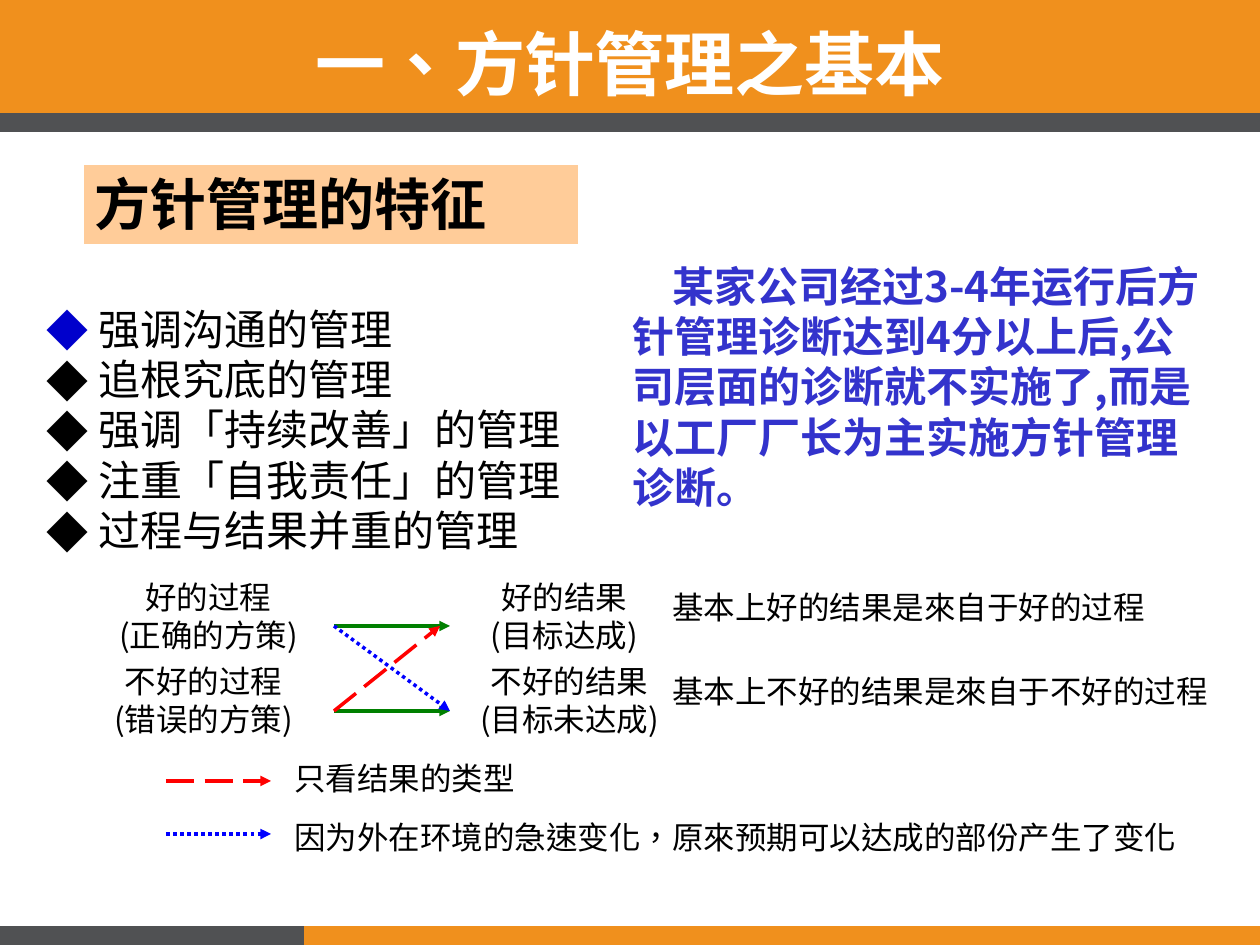
from lxml import etree
from pptx import Presentation
from pptx.dml.color import RGBColor
from pptx.enum.dml import MSO_LINE
from pptx.enum.lang import MSO_LANGUAGE_ID as LANG
from pptx.enum.shapes import MSO_CONNECTOR, MSO_SHAPE
from pptx.enum.text import MSO_ANCHOR, PP_ALIGN
from pptx.oxml.ns import qn
from pptx.util import Pt

PX = 914400 / 126
FONT = "Noto Sans CJK SC"


def rgb(color):
    return RGBColor.from_string(color)


def write(tf, lines, size=18, color="000000", bold=False, align=PP_ALIGN.LEFT,
          lang=LANG.SIMPLIFIED_CHINESE):
    """Fill a text frame, one paragraph a line."""
    for name, value in dict(word_wrap=True, vertical_anchor=MSO_ANCHOR.TOP).items():
        setattr(tf, name, value)
    for i, line in enumerate(lines):
        p = tf.paragraphs[0] if i == 0 else tf.add_paragraph()
        p.alignment = align
        r = p.add_run()
        r.text = line
        for name, value in dict(name=FONT, size=Pt(size), bold=bold, language_id=lang).items():
            setattr(r.font, name, value)
        r.font.color.rgb = rgb(color)
        etree.SubElement(r.font._element, qn("a:ea"), typeface=FONT)


prs = Presentation()
prs.slide_width, prs.slide_height = round(1260 * PX), round(945 * PX)
s = prs.slides.add_slide(prs.slide_layouts[6])

# Bands at top and bottom, then the heading panel
rects = [
    (0, 0, 1260, 113, "F0901D"),
    (0, 113, 1260, 19, "505153"),
    (246, 926, 1014, 19, "F0901D"),
    (0, 926, 304, 19, "505153"),
    (82, 163, 498, 83, "FFCC99"),
]
for *box, color in rects:
    sp = s.shapes.add_shape(MSO_SHAPE.RECTANGLE, *[round(v * PX) for v in box])
    sp.shadow.inherit = False
    sp.fill.solid()
    sp.fill.fore_color.rgb = rgb(color)
    sp.line.fill.background()
heading = sp
heading.line.color.rgb = rgb("FFFFFF")
heading.line.width = Pt(2.25)
write(heading.text_frame, ["方针管理的特征"], size=32, bold=True)

# Text boxes
center = dict(align=PP_ALIGN.CENTER)
features = ["强调沟通的管理", "追根究底的管理", "强调「持续改善」的管理",
            "注重「自我责任」的管理", "过程与结果并重的管理"]
example = ("某家公司经过3-4年运行后方针管理诊断达到4分以上后,"
           "公司层面的诊断就不实施了,而是以工厂厂长为主实施方针管理诊断。")
texts = [
    (0, 14, 1260, 97, ["一、方针管理之基本"],
     dict(size=40, color="FFFFFF", bold=True, lang=LANG.TRADITIONAL_CHINESE, **center)),
    (94, 572, 229, 88, ["好的过程", "(正确的方策)"], center),
    (84, 656, 239, 88, ["不好的过程", "(错误的方策)"], center),
    (450, 572, 229, 88, ["好的结果", "(目标达成)"], center),
    (450, 656, 239, 88, ["不好的结果", "(目标未达成)"], center),
    (660, 582, 554, 50, ["基本上好的结果是來自于好的过程"], {}),
    (660, 666, 600, 50, ["基本上不好的结果是來自于不好的过程"], {}),
    (282, 753, 246, 50, ["只看结果的类型"], {}),
    (282, 812, 978, 50, ["因为外在环境的急速变化，原來预期可以达成的部份产生了变化"],
     dict(lang=LANG.TRADITIONAL_CHINESE)),
    (34, 297, 850, 267, features, dict(size=24)),
    (620, 254, 600, 267, [example], dict(size=24, color="3333CC", bold=True)),
]
frames = []
for *box, lines, style in texts:
    tf = s.shapes.add_textbox(*[round(v * PX) for v in box]).text_frame
    write(tf, lines, **style)
    frames.append(tf)
feature_tf, example_tf = frames[-2:]

for i, p in enumerate(feature_tf.paragraphs):
    pPr = p._p.get_or_add_pPr()
    pPr.set("marL", str(round(52 * PX)))
    pPr.set("indent", str(round(-52 * PX)))
    bu_clr = etree.SubElement(pPr, qn("a:buClr"))
    etree.SubElement(bu_clr, qn("a:srgbClr"), val="000000" if i else "0000CC")
    etree.SubElement(pPr, qn("a:buFont"), typeface=FONT)
    etree.SubElement(pPr, qn("a:buChar"), char="◆")
example_tf.paragraphs[0]._p.get_or_add_pPr().set("indent", str(round(40 * PX)))

# Arrows: process to result, then the legend
solid = ("008000", MSO_LINE.SOLID)
dotted = ("0000FF", MSO_LINE.ROUND_DOT)
dashed = ("FF0000", MSO_LINE.LONG_DASH)
arrows = [
    (334, 626, 450, 626, solid),
    (334, 711, 450, 711, solid),
    (334, 626, 450, 711, dotted),
    (334, 711, 440, 626, dashed),
    (166, 781, 271, 781, dashed),
    (166, 834, 271, 834, dotted),
]
for *ends, (color, dash) in arrows:
    c = s.shapes.add_connector(MSO_CONNECTOR.STRAIGHT, *[round(v * PX) for v in ends])
    c.line.color.rgb = rgb(color)
    c.line.width = Pt(2)
    c.line.dash_style = dash
    etree.SubElement(c.line._get_or_add_ln(), qn("a:tailEnd"), type="triangle")
    etree.SubElement(c._element.spPr, qn("a:effectLst"))

prs.save("out.pptx")
